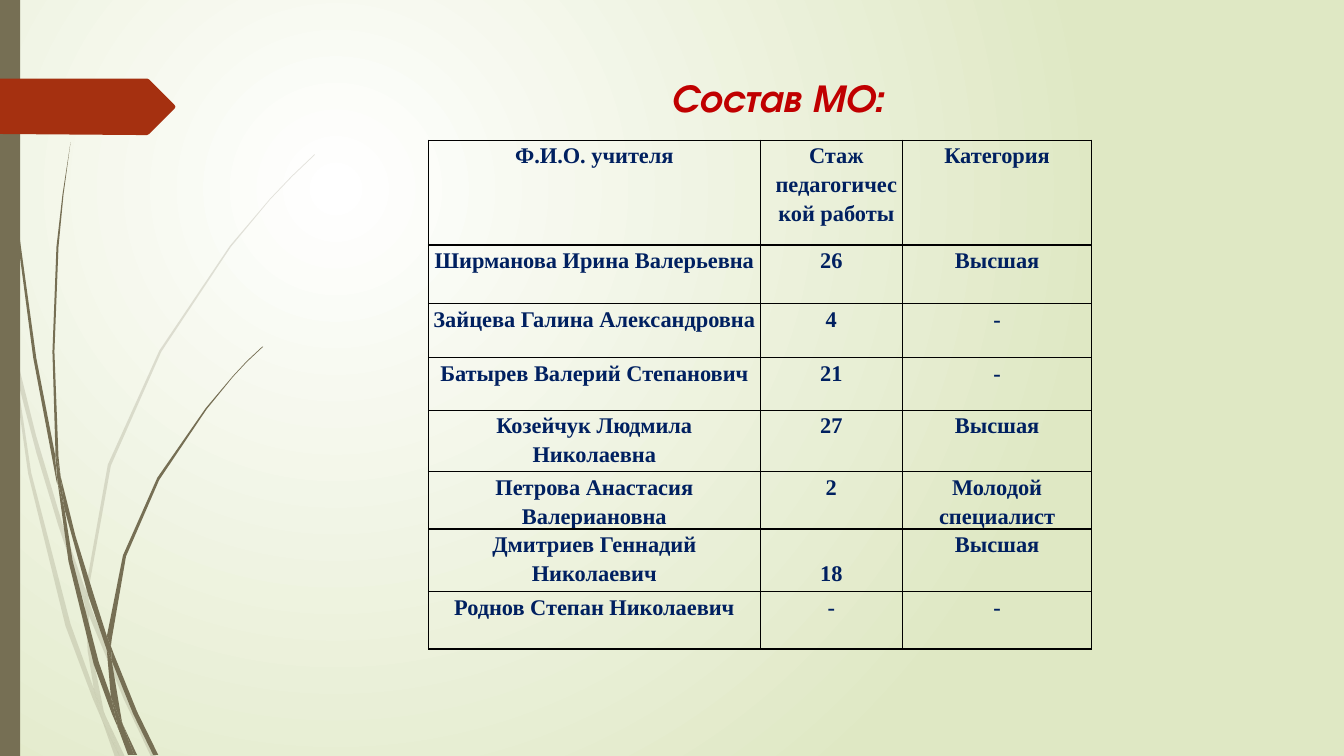
from dataclasses import dataclass

from lxml import etree
from pptx import Presentation
from pptx import util as u
from pptx.dml.color import RGBColor
from pptx.enum import shapes, text
from pptx.oxml import ns

COLORS = {
    "glow": "FFFFFF", "meadow": "DFE8C4", "grass": "766F54", "marker": "A53010",
    "heading": "C00000", "entry": "002060", "border": "000000",
}
HUNDREDTH = u.Inches(0.01)


@dataclass(frozen=True)
class Tuft:
    """Blade outlines of one colour; points are in hundredths of an inch."""
    color: str
    alpha: int
    blades: tuple


@dataclass(frozen=True)
class Teacher:
    name: str
    years: str
    category: str
    height: float


PALE_TUFT = Tuft("grass", 20, (
    ((11, 350), (9, 322), (0, 282), (0, 299), (10, 344)),
    ((58, 522), (84, 599), (85, 586), (62, 520), (36, 433), (14, 345), (17, 376), (36, 449)),
    ((92, 607), (88, 596), (88, 610), (123, 694), (150, 751), (155, 751), (127, 692)),
    ((119, 751), (124, 751), (105, 711)),
    ((93, 683), (70, 619), (31, 469), (17, 376), (11, 350), (28, 470), (65, 621),
     (92, 693), (101, 714), (99, 707)),
    ((84, 599), (87, 646), (93, 683), (96, 692), (105, 711), (103, 706), (91, 646),
     (88, 610), (88, 608)),
    ((88, 584), (110, 462), (160, 349), (229, 245), (268, 198), (290, 175), (312, 154),
     (312, 153), (289, 175), (268, 197), (228, 244), (158, 348), (107, 461), (85, 584),
     (85, 586), (88, 596)),
    ((101, 714), (114, 751), (119, 751)),
    ((88, 608), (88, 610), (88, 596), (85, 586), (84, 599)),
    ((96, 692), (93, 683), (99, 707), (101, 714), (119, 751), (105, 711)),
))
DARK_TUFT = Tuft("grass", 100, (
    ((7, 110), (17, 233), (33, 355), (56, 477), (57, 481), (55, 457), (55, 453), (36, 355),
     (19, 232), (8, 109), (5, 48), (4, 0), (3, 0), (4, 48)),
    ((88, 592), (106, 645), (106, 633), (106, 631), (93, 590), (75, 532), (60, 472),
     (64, 505)),
    ((113, 649), (110, 641), (111, 656), (132, 708), (152, 749), (157, 749), (136, 706)),
    ((110, 691), (98, 657), (72, 556), (64, 505), (57, 477), (68, 557), (93, 659),
     (111, 708), (117, 722), (116, 717)),
    ((60, 472), (58, 453), (54, 349), (58, 245), (63, 193), (70, 141), (62, 193), (56, 245),
     (52, 349), (55, 449)),
    ((133, 749), (136, 749), (122, 719)),
    ((57, 477), (64, 505), (60, 472), (55, 449), (55, 453)),
    ((111, 633), (125, 552), (158, 476), (205, 406), (231, 374), (245, 359), (261, 344),
     (260, 344), (245, 358), (231, 373), (204, 405), (156, 474), (122, 551), (106, 631),
     (110, 641)),
    ((117, 722), (127, 749), (131, 749)),
    ((106, 645), (110, 691), (116, 706), (122, 719), (121, 716), (111, 656), (109, 651)),
    ((106, 645), (109, 651), (111, 656), (110, 641), (106, 631), (106, 633)),
    ((116, 706), (110, 691), (116, 717), (117, 722), (130, 749), (133, 749), (122, 719)),
))
MARKER = ((173, 108), (148, 133), (146, 134), (136, 134), (0, 133), (0, 78), (136, 78),
          (146, 78), (148, 79), (173, 104), (174, 106))

HEADINGS = Teacher("Ф.И.О. учителя", "Стаж педагогической работы", "Категория", 1.04)
TEACHERS = (
    Teacher("Ширманова Ирина Валерьевна", "26", "Высшая", 0.58),
    Teacher("Зайцева Галина Александровна", "4", "-", 0.54),
    Teacher("Батырев Валерий Степанович", "21", "-", 0.52),
    Teacher("Козейчук Людмила Николаевна", "27", "Высшая", 0.61),
    Teacher("Петрова Анастасия Валериановна", "2", "Молодой специалист", 0.57),
    Teacher("Дмитриев Геннадий Николаевич", "18", "Высшая", 0.62),
    Teacher("Роднов Степан Николаевич", "-", "-", 0.57),
)
COLUMN_WIDTHS = (3.29, 1.41, 1.88)


def rgb(color: str) -> RGBColor:
    return RGBColor.from_string(COLORS[color])


def paint_background(slide) -> None:
    fill = slide.background.fill
    fill.gradient()
    for stop, color in zip(fill.gradient_stops, ("glow", "meadow")):
        stop.color.rgb = rgb(color)
    linear = slide.element.find(".//" + ns.qn("a:lin"))
    circle = etree.Element(ns.qn("a:path"), path="circle")
    etree.SubElement(circle, ns.qn("a:fillToRect"),
                     l="50000", t="50000", r="100000", b="100000")
    linear.getparent().replace(linear, circle)


def paint_shape(shape, color: str, alpha: int = 100) -> None:
    shape.shadow.inherit = False
    shape.fill.solid()
    shape.fill.fore_color.rgb = rgb(color)
    shape.line.fill.background()
    if alpha < 100:
        tint = shape.element.spPr.find(".//" + ns.qn("a:srgbClr"))
        etree.SubElement(tint, ns.qn("a:alpha"), val=str(alpha * 1000))


def draw_outline(canvas, points: tuple, color: str, alpha: int = 100) -> None:
    builder = canvas.build_freeform(*points[0], scale=HUNDREDTH)
    builder.add_line_segments(points[1:], close=True)
    paint_shape(builder.convert_to_shape(), color, alpha)


def draw_tuft(slide, tuft: Tuft) -> None:
    group = slide.shapes.add_group_shape()
    for blade in tuft.blades:
        draw_outline(group.shapes, blade, tuft.color, tuft.alpha)


def write_heading(slide) -> None:
    heading = slide.shapes.title
    heading.left, heading.top = u.Inches(2.84), u.Inches(0.68)
    heading.width, heading.height = u.Inches(9.75), u.Inches(1.4)
    frame = heading.text_frame
    frame.text = "Состав МО:"
    frame.vertical_anchor = text.MSO_ANCHOR.TOP
    frame.auto_size = text.MSO_AUTO_SIZE.NONE
    paragraph = frame.paragraphs[0]
    paragraph.alignment = text.PP_ALIGN.CENTER
    font = paragraph.font
    font.name, font.size, font.bold, font.italic = "TeX Gyre Adventor", u.Pt(28), True, True
    font.color.rgb = rgb("heading")


def write_cell(cell, entry: str) -> None:
    cell.text = entry
    cell.margin_left = cell.margin_right = u.Inches(0.04)
    cell.margin_top = cell.margin_bottom = 0
    paragraph = cell.text_frame.paragraphs[0]
    paragraph.alignment = text.PP_ALIGN.CENTER
    paragraph.line_spacing = 1.15
    font = paragraph.font
    font.name, font.size, font.bold = "Times New Roman", u.Pt(16), True
    font.color.rgb = rgb("entry")
    properties = cell._tc.get_or_add_tcPr()
    for side in "LRTB":
        border = etree.SubElement(properties, ns.qn(f"a:ln{side}"), w=str(u.Pt(1)))
        ink = etree.SubElement(border, ns.qn("a:solidFill"))
        etree.SubElement(ink, ns.qn("a:srgbClr"), val=COLORS["border"])
    cell.fill.background()


def draw_staff(slide) -> None:
    entries = (HEADINGS, *TEACHERS)
    staff = slide.shapes.add_table(
        len(entries), len(COLUMN_WIDTHS), u.Inches(4.25), u.Inches(1.39),
        u.Inches(sum(COLUMN_WIDTHS)), u.Inches(sum(e.height for e in entries))).table
    staff.first_row = staff.horz_banding = False
    for column, width in zip(staff.columns, COLUMN_WIDTHS):
        column.width = u.Inches(width)
    for row, teacher in zip(staff.rows, entries):
        row.height = u.Inches(teacher.height)
        for cell, entry in zip(row.cells, (teacher.name, teacher.years, teacher.category)):
            write_cell(cell, entry)
    # The experience heading is indented; the 18 years sit on the second line
    staff.cell(0, 1).margin_left = u.Inches(0.14)
    eighteen = staff.cell(6, 1)
    eighteen.vertical_anchor = text.MSO_ANCHOR.BOTTOM
    eighteen.margin_bottom = u.Inches(0.05)


def main() -> None:
    deck = Presentation()
    deck.slide_width, deck.slide_height = u.Inches(13.33), u.Inches(7.5)
    slide = deck.slides.add_slide(deck.slide_layouts[5])
    # Backdrop
    paint_background(slide)
    for tuft in (PALE_TUFT, DARK_TUFT):
        draw_tuft(slide, tuft)
    edge = slide.shapes.add_shape(shapes.MSO_SHAPE.RECTANGLE, 0, 0, u.Inches(0.2), u.Inches(7.5))
    paint_shape(edge, "grass")
    draw_outline(slide.shapes, MARKER, "marker")
    # Content
    write_heading(slide)
    draw_staff(slide)
    deck.save("out.pptx")


if __name__ == "__main__":
    main()
